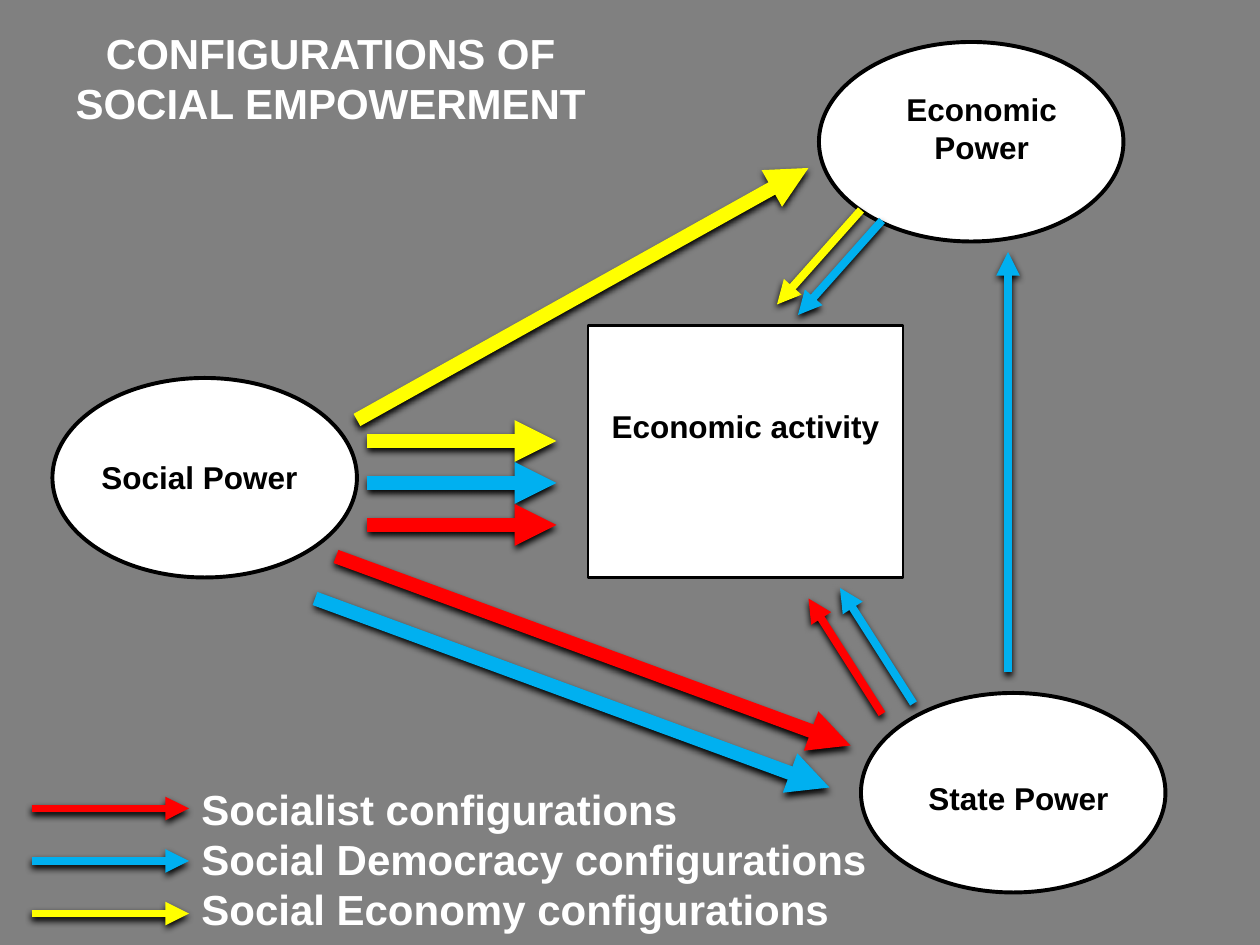
from lxml import etree
from pptx import Presentation
from pptx.dml.color import RGBColor
from pptx.enum.shapes import MSO_CONNECTOR, MSO_SHAPE
from pptx.enum.text import MSO_ANCHOR, MSO_AUTO_SIZE, PP_ALIGN
from pptx.oxml.ns import qn
from pptx.util import Pt

OVAL, RECT = MSO_SHAPE.OVAL, MSO_SHAPE.RECTANGLE
STRAIGHT = MSO_CONNECTOR.STRAIGHT
LEFT, CENTER = PP_ALIGN.LEFT, PP_ALIGN.CENTER
TOP = MSO_ANCHOR.TOP
NO_FIT = MSO_AUTO_SIZE.NONE

# Content; all lengths in points
RED, BLUE, YELLOW = "FF0000", "00B0F0", "FFFF00"
BLACK, WHITE, GRAY = "000000", "FFFFFF", "808080"
THICK, THIN = 8, 4.5
LINE = 21.6  # height of an 18 pt text line
INSET = 3.6

TITLE = "CONFIGURATIONS OF SOCIAL EMPOWERMENT"
OVAL_SIZE = (174, 114)
# oval position, label box, label lines, lines left free above the label
POWERS = [
    ((30, 216), (48, 258, 132, 36), ["Social Power"], 0),
    ((468, 24), (498, 48, 126, 66), ["Economic", "Power"], 0),
    ((492, 396), (516, 420, 132, 66), ["State Power"], 1),
]
ACTIVITY = ((336, 186, 180, 144), ["Economic activity"], 2)
# start, end, colour, width
ARROWS = [
    ((204, 240), (462, 96), YELLOW, THICK),
    ((192, 318), (486, 426), RED, THICK),
    ((576, 384), (576, 144), BLUE, THIN),
    ((504, 408), (462, 342), RED, THIN),
    ((492, 120), (444, 174), YELLOW, THIN),
    ((180, 342), (474, 450), BLUE, THICK),
    ((504, 126), (456, 180), BLUE, THIN),
    ((522, 402), (480, 336), BLUE, THIN),
]
DIRECT = [YELLOW, BLUE, RED]  # social power to economic activity
LEGEND = [
    ("Socialist configurations", RED),
    ("Social Democracy configurations", BLUE),
    ("Social Economy configurations", YELLOW),
]


def rgb(value):
    return RGBColor.from_string(value)


def write(shape, lines, size, color, align, free_lines=0):
    tf = shape.text_frame
    tf.word_wrap = True
    tf.auto_size = NO_FIT
    tf.vertical_anchor = TOP
    tf.margin_top = Pt(INSET + free_lines * LINE)
    for i, line in enumerate(lines):
        p = tf.add_paragraph() if i else tf.paragraphs[0]
        p.alignment = align
        r = p.add_run()
        r.text = line
        r.font.name, r.font.size, r.font.bold = "Arial", Pt(size), True
        r.font.color.rgb = rgb(color)


def add_box(shapes, kind, box, border=0):
    sp = shapes.add_shape(kind, *map(Pt, box))
    sp.shadow.inherit = False
    sp.fill.solid()
    sp.fill.fore_color.rgb = rgb(WHITE)
    if border:
        sp.line.color.rgb = rgb(BLACK)
        sp.line.width = Pt(border)
    else:
        sp.line.fill.background()
    return sp


def add_arrow(shapes, start, end, color, width):
    cxn = shapes.add_connector(STRAIGHT, *map(Pt, start + end))
    cxn.line.color.rgb = rgb(color)
    cxn.line.width = Pt(width)
    etree.SubElement(cxn.line._get_or_add_ln(), qn("a:tailEnd"), type="triangle")
    # Soft shadow straight below the line
    effects = etree.SubElement(cxn._element.spPr, qn("a:effectLst"))
    shadow = etree.SubElement(effects, qn("a:outerShdw"), blurRad=str(Pt(4)),
                              dist=str(Pt(2)), dir="5400000", rotWithShape="0")
    etree.SubElement(shadow, qn("a:srgbClr"), val=BLACK)


prs = Presentation()
prs.slide_width, prs.slide_height = Pt(720), Pt(540)
s = prs.slides.add_slide(prs.slide_layouts[5])
s.background.fill.solid()
s.background.fill.fore_color.rgb = rgb(GRAY)

# Title
title = s.shapes.title
title.left, title.top, title.width, title.height = map(Pt, (12, 12, 354, 66))
write(title, [TITLE], 24, WHITE, CENTER)

# Powers
for position, label_box, lines, free in POWERS:
    add_box(s.shapes, OVAL, position + OVAL_SIZE, 2.25)
    write(add_box(s.shapes, RECT, label_box), lines, 18, BLACK, CENTER, free)

# Arrows between the powers and the activity
for arrow in ARROWS:
    add_arrow(s.shapes, *arrow)
for i, color in enumerate(DIRECT):
    y = 252 + 24 * i
    add_arrow(s.shapes, (210, y), (318, y), color, THICK)

# Economic activity
box, lines, free = ACTIVITY
write(add_box(s.shapes, RECT, box, 1.5), lines, 18, BLACK, CENTER, free)

# Legend
legend = s.shapes.add_group_shape().shapes
for i, (name, color) in enumerate(LEGEND):
    y = 462 + 30 * i
    add_arrow(legend, (18, y), (108, y), color, THIN)
names = legend.add_textbox(*map(Pt, (108, 444, 483, 94)))
write(names, [name for name, color in LEGEND], 24, WHITE, LEFT)

prs.save("out.pptx")
